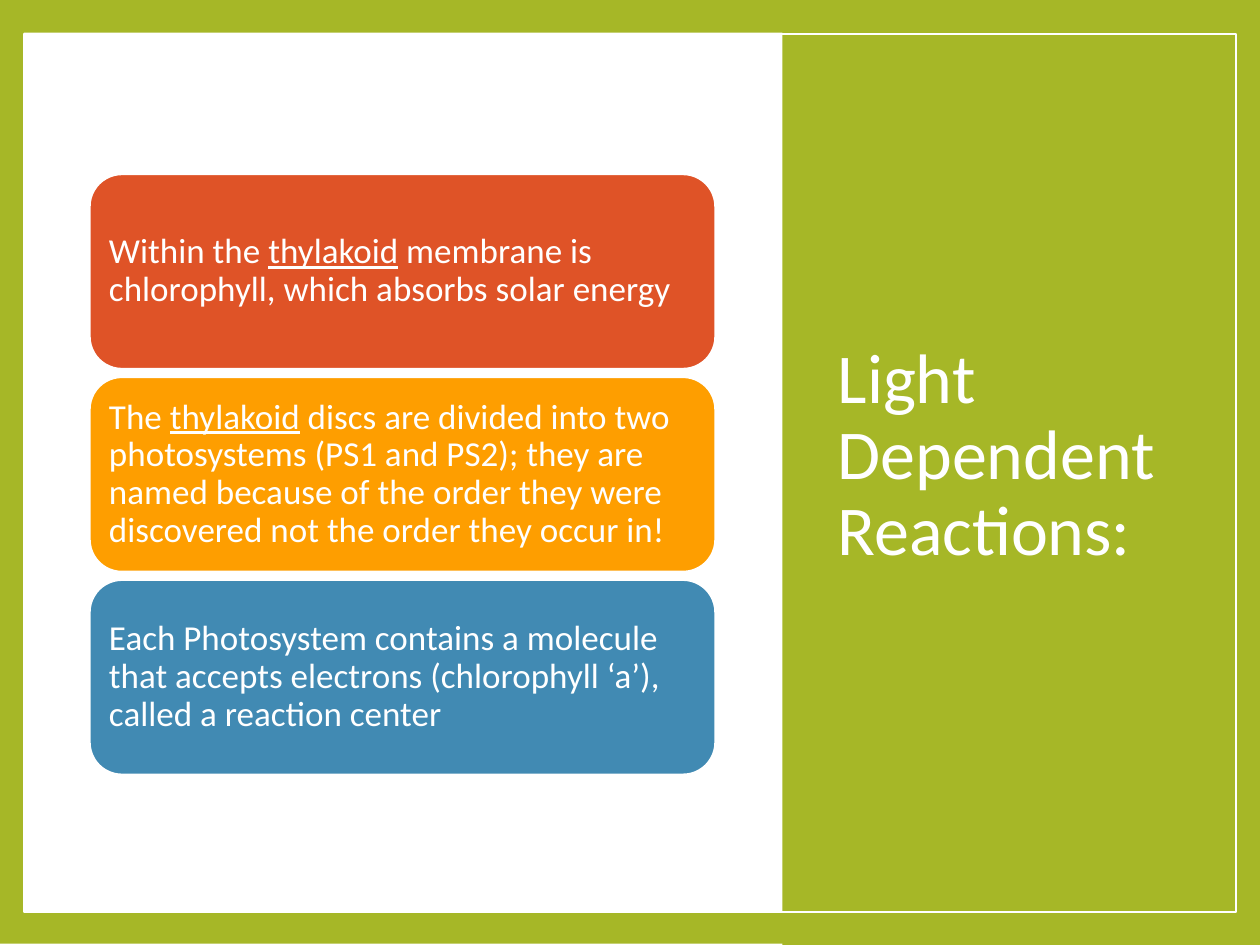
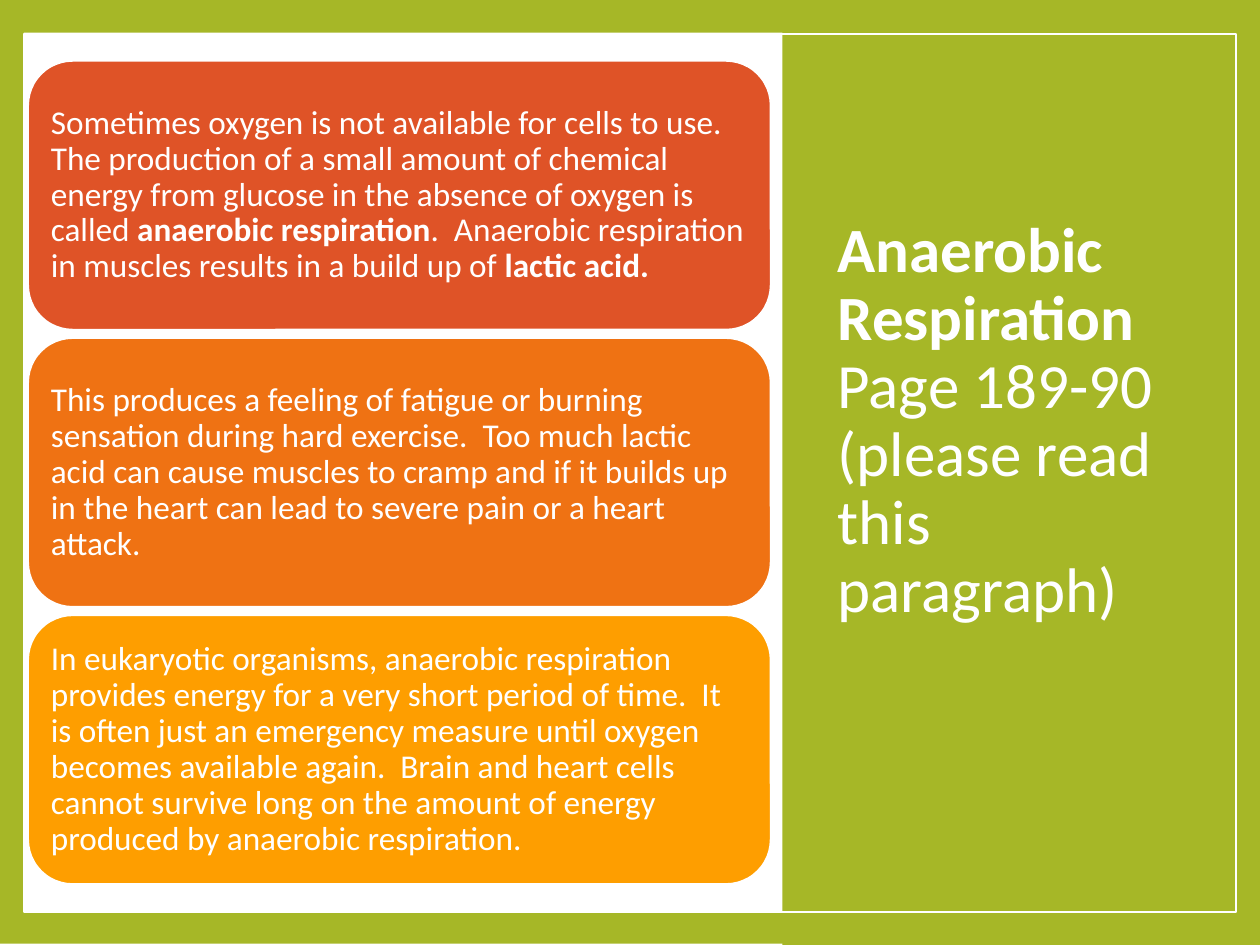
"""Build two slides on light dependent reactions and anaerobic respiration."""
from pptx import Presentation, util as u
from pptx.dml.color import RGBColor
from pptx.enum import shapes, text

PX = 9144
FONT = "Calibri"
WHITE, GREEN = "FFFFFF", "A6B727"
RED, ORANGE, AMBER, BLUE = "DF5327", "EF7213", "FE9E00", "418AB3"
GAP = 6
LINE = {"underline": True}
BOLD = {"bold": True}


def px(*nums):
    """Turn px into EMU."""
    return [u.Emu(n * PX) for n in nums]


def rgb(code):
    """Turn a hex string into a colour."""
    return RGBColor.from_string(code)


def block(slide, kind, spot, fill=None, edge=None, width=1):
    """Add a preset shape with an optional fill and outline."""
    shape = slide.shapes.add_shape(kind, *px(*spot))
    shape.shadow.inherit = False
    if fill:
        shape.fill.solid()
        shape.fill.fore_color.rgb = rgb(fill)
    else:
        shape.fill.background()
    if edge:
        shape.line.color.rgb = rgb(edge)
        shape.line.width = u.Pt(width)
    else:
        shape.line.fill.background()
    return shape


def write(shape, runs, size, pads):
    """Fill a shape with one paragraph; a plain newline breaks the line."""
    frame = shape.text_frame
    sides = ("left", "top", "right", "bottom")
    form = {f"margin_{side}": pad for side, pad in zip(sides, px(*pads))}
    form.update(word_wrap=True, vertical_anchor=text.MSO_ANCHOR.MIDDLE)
    for key, val in form.items():
        setattr(frame, key, val)
    para = frame.paragraphs[0]
    para.alignment = text.PP_ALIGN.LEFT
    para.line_spacing = 0.9
    for part in runs:
        if part == "\n":
            para.add_line_break()
            continue
        words, style = part if isinstance(part, tuple) else (part, {})
        run = para.add_run()
        run.text = words
        run.font.color.rgb = rgb(WHITE)
        for key, val in {"name": FONT, "size": u.Pt(size), **style}.items():
            setattr(run.font, key, val)


def base(deck, title, size, foot=5):
    """Add a slide with its green frame, white panel, side band and title."""
    slide = deck.slides.add_slide(deck.slide_layouts[6])
    rect = shapes.MSO_SHAPE.RECTANGLE
    block(slide, rect, (0, -1, 1000, 750), GREEN)
    block(slide, rect, (19, 26, 962, 697), WHITE)
    block(slide, rect, (621, 0, 379, 750), GREEN)
    box = slide.shapes.add_textbox(*px(655, 67, 293, 591))
    write(box, title, size, (10, 5, 10, foot))
    block(slide, rect, (19, 27, 962, 697), edge=WHITE)
    return slide


def stack(slide, spot, size, cards):
    """Stack equal rounded cards downwards from the first spot."""
    left, top, wide, high = spot
    for row, (fill, runs) in enumerate(cards):
        place = (left, top + row * (high + GAP), wide, high)
        card = block(slide, shapes.MSO_SHAPE.ROUNDED_RECTANGLE, place,
                     fill, WHITE, 1.5)
        write(card, runs, size, (8, 8, 8, 8))


def main():
    """Build and save the deck."""
    deck = Presentation()
    deck.slide_width, deck.slide_height = px(1000, 750)

    light = base(deck, ["Light Dependent Reactions:"], 40)
    stack(light, (71, 138, 497, 155), 20, [
        (RED, ["Within the ", ("thylakoid", LINE),
               " membrane is chlorophyll, which absorbs solar energy"]),
        (AMBER, ["The ", ("thylakoid", LINE),
                 " discs are divided into two photosystems (PS1 and PS2); "
                 "they are named because of the order they were discovered "
                 "not the order they occur in!"]),
        (BLUE, ["Each Photosystem contains a molecule that accepts electrons "
                "(chlorophyll ‘a’), called a reaction center"]),
    ])

    title = [("Anaerobic Respiration", BOLD), "\n",
             "Page 189-90 (please read this paragraph)"]
    lactic = base(deck, title, 36, foot=60)
    stack(lactic, (22, 48, 590, 214), 19, [
        (RED, ["Sometimes oxygen is not available for cells to use.  The "
               "production of a small amount of chemical energy from glucose "
               "in the absence of oxygen is called ",
               ("anaerobic respiration", BOLD),
               ".  Anaerobic respiration in muscles results in a build up of ",
               ("lactic acid.", BOLD)]),
        (ORANGE, ["This produces a feeling of fatigue or burning sensation "
                  "during hard exercise.  Too much lactic acid can cause "
                  "muscles to cramp and if it builds up in the heart can lead "
                  "to severe pain or a heart attack."]),
        (AMBER, ["In eukaryotic organisms, anaerobic respiration provides "
                 "energy for a very short period of time.  It is often just "
                 "an emergency measure until oxygen becomes available again.  "
                 "Brain and heart cells cannot survive long on the amount of "
                 "energy produced by anaerobic respiration."]),
    ])
    deck.save("out.pptx")


if __name__ == "__main__":
    main()
